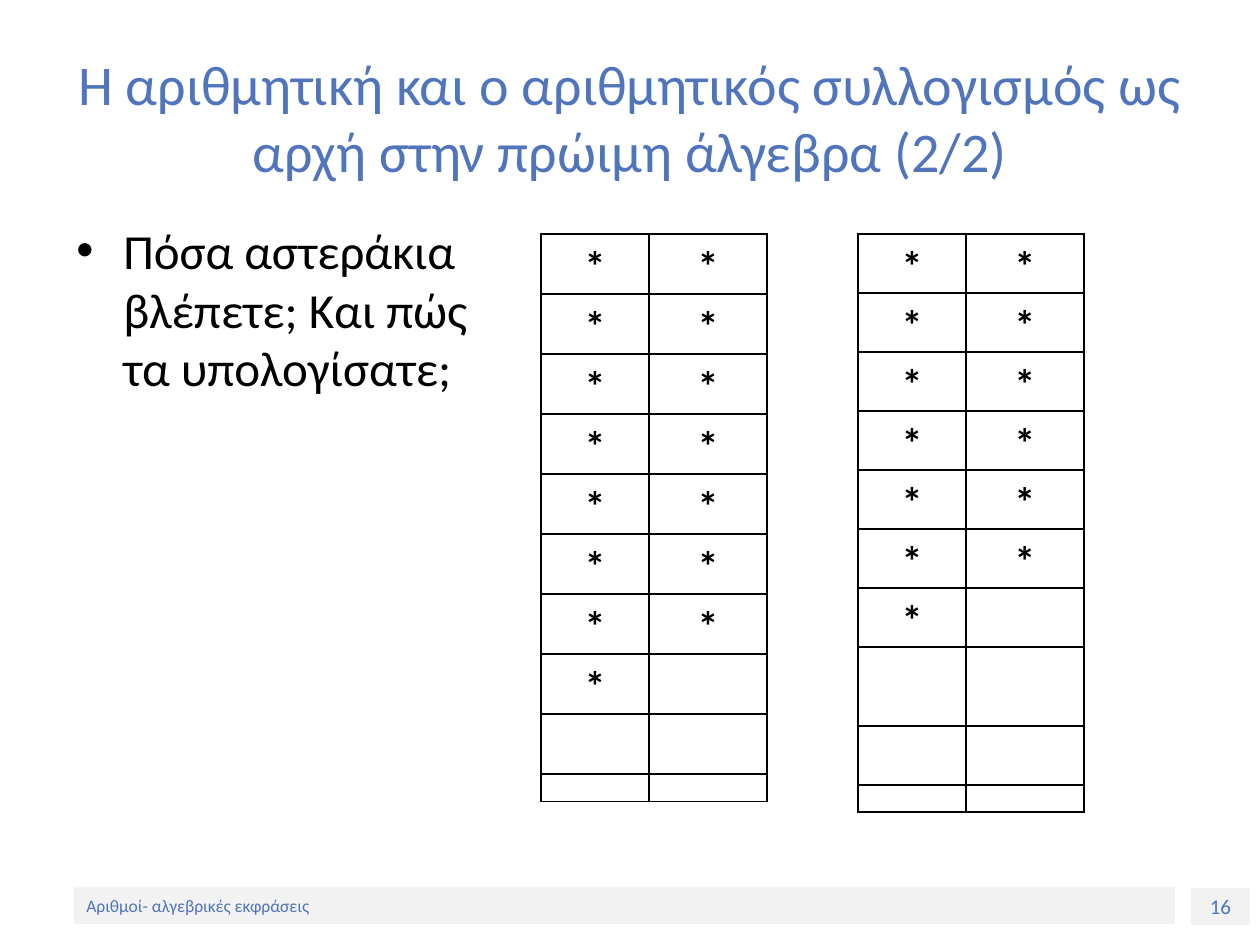
"""Build a slide with a question and two tables of asterisks."""
from lxml import etree
from pptx import Presentation
from pptx.dml.color import RGBColor
from pptx.enum.shapes import MSO_SHAPE
from pptx.enum.text import MSO_ANCHOR, PP_ALIGN
from pptx.oxml.ns import qn
from pptx.util import Pt

PX = 914400 // 126
FONT = "Calibri"
COLORS = {"blue": "5075BC", "black": "000000", "band": "F2F2F2"}
RECTANGLE = MSO_SHAPE.RECTANGLE
LEFT, CENTER = PP_ALIGN.LEFT, PP_ALIGN.CENTER
TOP, MIDDLE = MSO_ANCHOR.TOP, MSO_ANCHOR.MIDDLE
TABLE_TOP = 234
COLUMN_WIDTHS = (108, 118)


def px(*lengths):
    """Turn px lengths into EMU."""
    return [length * PX for length in lengths]


def write(frame, text, size, color="black", align=LEFT, anchor=TOP, bold=False):
    """Put one formatted paragraph in a text frame and return it."""
    frame.word_wrap = True
    frame.vertical_anchor = anchor
    para = frame.paragraphs[0]
    para.alignment = align
    span = para.add_run()
    span.text = text
    span.font.name = FONT
    span.font.size = Pt(size)
    span.font.bold = bold
    span.font.color.rgb = RGBColor.from_string(COLORS[color])
    return para


def add_text(page, place, text, size, **style):
    """Add a text box and return its paragraph."""
    box = page.shapes.add_textbox(*px(*place))
    return write(box.text_frame, text, size, **style)


def add_band(page, place, text, size, align):
    """Add a grey footer band with blue text."""
    band = page.shapes.add_shape(RECTANGLE, *px(*place))
    band.shadow.inherit = False
    band.fill.solid()
    band.fill.fore_color.rgb = RGBColor.from_string(COLORS["band"])
    band.line.fill.background()
    write(band.text_frame, text, size, color="blue", align=align, anchor=MIDDLE)


def add_bullet(para, indent):
    """Give a paragraph a hanging bullet."""
    properties = para._p.get_or_add_pPr()
    properties.set("marL", str(indent * PX))
    properties.set("indent", str(-indent * PX))
    etree.SubElement(properties, qn("a:buFont"), typeface="Arial")
    etree.SubElement(properties, qn("a:buChar"), char="•")


def format_cell(cell):
    """Give a cell thin black borders, narrow margins and no fill."""
    cell.margin_left = cell.margin_right = 9 * PX
    cell.margin_top = cell.margin_bottom = 0
    properties = cell._tc.get_or_add_tcPr()
    for side in ("lnL", "lnR", "lnT", "lnB"):
        line = etree.SubElement(properties, qn(f"a:{side}"), w=str(Pt(1)))
        fill = etree.SubElement(line, qn("a:solidFill"))
        etree.SubElement(fill, qn("a:srgbClr"), val=COLORS["black"])
    cell.fill.background()


def add_star_table(page, left, heights, stars):
    """Add a two-column table filled row by row with asterisks."""
    columns = len(COLUMN_WIDTHS)
    place = px(left, TABLE_TOP, sum(COLUMN_WIDTHS), sum(heights))
    table = page.shapes.add_table(len(heights), columns, *place).table
    table.first_row = table.horz_banding = False
    for column, width in zip(table.columns, COLUMN_WIDTHS):
        column.width = width * PX
    for row, height in zip(table.rows, heights):
        row.height = height * PX
    for index, cell in enumerate(table.iter_cells()):
        format_cell(cell)
        if index < stars:
            para = write(cell.text_frame, "*", 24, align=CENTER, bold=True)
            para.line_spacing = 1.15
        else:
            para = cell.text_frame.paragraphs[0]
            etree.SubElement(para._p, qn("a:endParaRPr"), sz="1000")


def main():
    """Build and save the deck."""
    deck = Presentation()
    deck.slide_width, deck.slide_height = px(1260, 945)
    page = deck.slides.add_slide(deck.slide_layouts[6])
    add_band(page, (1191, 888, 59, 37), "16", 12, CENTER)
    add_band(page, (74, 887, 1101, 37), "Αριθμοί- αλγεβρικές εκφράσεις", 10, LEFT)
    add_text(page, (63, 38, 1134, 157),
             "Η αριθμητική και ο αριθμητικός συλλογισμός ως αρχή στην πρώιμη άλγεβρα (2/2)",
             32, color="blue", align=CENTER, anchor=MIDDLE)
    question = add_text(page, (64, 214, 466, 624),
                        "Πόσα αστεράκια βλέπετε; Και πώς τα υπολογίσατε;", 28)
    question.space_before = Pt(12)
    add_bullet(question, 47)
    add_star_table(page, 541, [60] * 9 + [28], 15)
    add_star_table(page, 858, [59] * 7 + [79, 59, 27], 13)
    deck.save("out.pptx")


if __name__ == "__main__":
    main()
